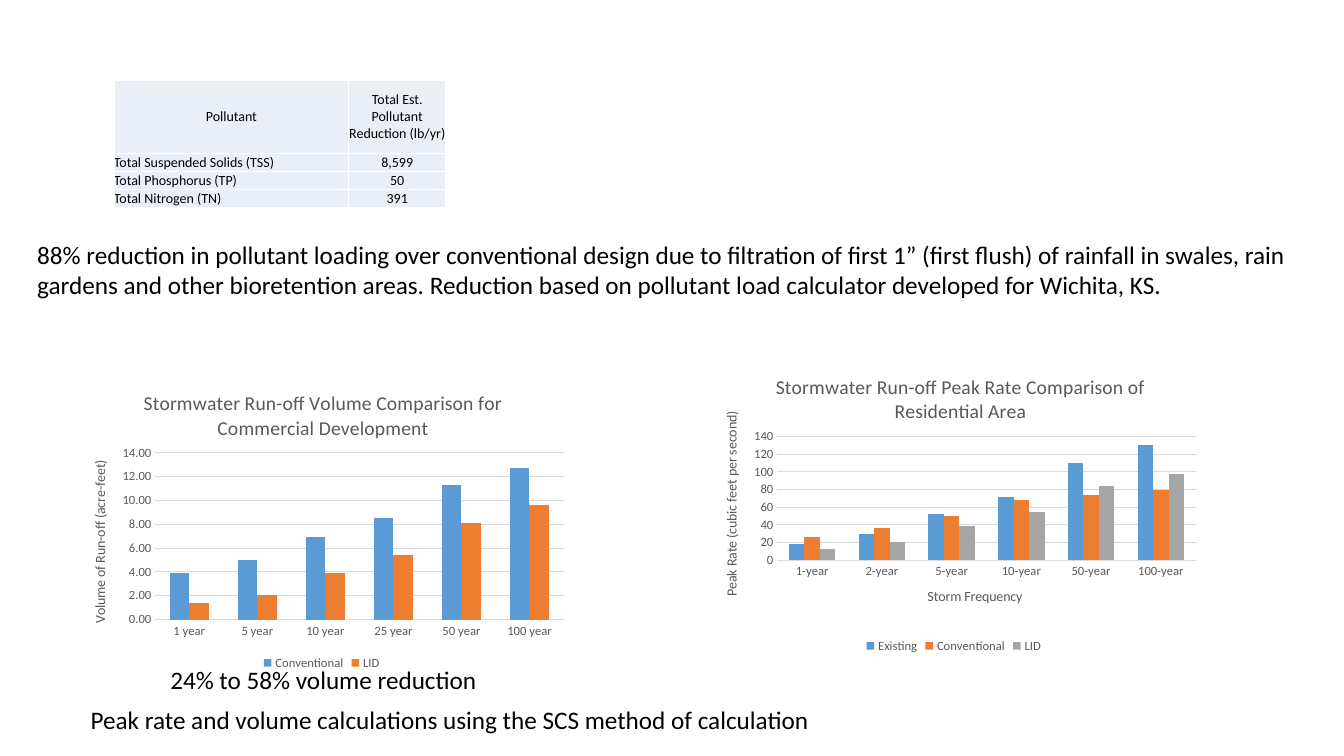
import pptx
import pptx.chart.data
import pptx.dml.color
import pptx.enum.chart
import pptx.enum.text
import pptx.oxml
import pptx.oxml.ns
import pptx.util
from dataclasses import dataclass

Inches = pptx.util.Inches
Pt = pptx.util.Pt


@dataclass(frozen=True)
class Theme:
    font: str = "Calibri"
    ink: str = "000000"
    muted: str = "595959"
    grid: str = "D9D9D9"
    cell: str = "EAEFF7"
    border: str = "FFFFFF"
    series: tuple = ("5B9BD5", "ED7D31", "A5A5A5")
    body: int = 18
    title: int = 14
    small: int = 10
    label: int = 9


THEME = Theme()


def rgb(value):
    return pptx.dml.color.RGBColor.from_string(value)


def set_font(font, size, color):
    font.name = THEME.font
    font.size = Pt(size)
    font.bold = False
    font.color.rgb = rgb(color)


def write_text(frame, text, size=THEME.body, color=THEME.ink, align=None):
    para = frame.paragraphs[0]
    para.alignment = align
    span = para.add_run()
    span.text = text
    set_font(span.font, size, color)


def add_note(page, box, text, wrap=False):
    shape = page.shapes.add_textbox(*map(Inches, box))
    shape.text_frame.word_wrap = wrap
    write_text(shape.text_frame, text)


def set_borders(cell):
    properties = cell._tc.get_or_add_tcPr()
    for position, side in enumerate(("lnL", "lnR", "lnT", "lnB")):
        line = pptx.oxml.parse_xml(
            f'<a:{side} {pptx.oxml.ns.nsdecls("a")} w="12700"><a:solidFill>'
            f'<a:srgbClr val="{THEME.border}"/></a:solidFill></a:{side}>')
        properties.insert(position, line)


def add_pollutant_table(page, box, rows, widths, heights):
    table = page.shapes.add_table(len(rows), len(widths), *map(Inches, box)).table
    for column, width in zip(table.columns, widths):
        column.width = Inches(width)
    for row, height in zip(table.rows, heights):
        row.height = Inches(height)
    for row_index, row in enumerate(rows):
        for column_index, text in enumerate(row):
            cell = table.cell(row_index, column_index)
            cell.margin_left = cell.margin_right = 0
            cell.margin_top = cell.margin_bottom = 0
            cell.vertical_anchor = pptx.enum.text.MSO_ANCHOR.MIDDLE
            cell.fill.solid()
            cell.fill.fore_color.rgb = rgb(THEME.cell)
            set_borders(cell)
            centered = row_index == 0 or column_index > 0
            align = pptx.enum.text.PP_ALIGN.CENTER if centered else None
            write_text(cell.text_frame, text, size=THEME.small, align=align)


def set_layout(parent, position, **fractions):
    for old in parent.findall(pptx.oxml.ns.qn("c:layout")):
        parent.remove(old)
    target = '<c:layoutTarget val="inner"/>' if "w" in fractions else ""
    modes = "".join(f'<c:{key}Mode val="edge"/>' for key in "xy")
    values = "".join(f'<c:{key} val="{value}"/>' for key, value in fractions.items())
    parent.insert(position, pptx.oxml.parse_xml(
        f'<c:layout {pptx.oxml.ns.nsdecls("c")}><c:manualLayout>'
        f'{target}{modes}{values}</c:manualLayout></c:layout>'))


def style_axis(axis, title):
    axis.major_tick_mark = pptx.enum.chart.XL_TICK_MARK.NONE
    axis.minor_tick_mark = pptx.enum.chart.XL_TICK_MARK.NONE
    axis.format.line.fill.background()
    set_font(axis.tick_labels.font, THEME.label, THEME.muted)
    axis.has_title = bool(title)
    if title:
        write_text(axis.axis_title.text_frame, title,
                   size=THEME.small, color=THEME.muted)


def add_runoff_chart(page, box, title, categories, series, plot_area,
                     value_title, category_title=None, number_format="0"):
    data = pptx.chart.data.CategoryChartData(number_format=number_format)
    data.categories = categories
    for name, values in series.items():
        data.add_series(name, values)
    chart = page.shapes.add_chart(
        pptx.enum.chart.XL_CHART_TYPE.COLUMN_CLUSTERED,
        *map(Inches, box), data).chart
    set_font(chart.font, THEME.small, THEME.ink)

    chart.has_title = True
    write_text(chart.chart_title.text_frame, title,
               size=THEME.title, color=THEME.muted)
    chart.chart_title.include_in_layout = False
    set_layout(chart.chart_title._element, 1, x=0.14, y=0.05)

    style_axis(chart.category_axis, category_title)
    style_axis(chart.value_axis, value_title)
    chart.value_axis.tick_labels.number_format = number_format
    chart.value_axis.tick_labels.number_format_is_linked = False
    grid = chart.value_axis.major_gridlines.format.line
    grid.color.rgb = rgb(THEME.grid)
    grid.width = Pt(0.75)

    chart.has_legend = True
    chart.legend.position = pptx.enum.chart.XL_LEGEND_POSITION.BOTTOM
    chart.legend.include_in_layout = False
    set_font(chart.legend.font, THEME.label, THEME.muted)

    plot = chart.plots[0]
    plot.gap_width = 150
    plot.overlap = 0
    plot.vary_by_categories = False
    for bars, color in zip(plot.series, THEME.series):
        bars.format.fill.solid()
        bars.format.fill.fore_color.rgb = rgb(color)
    set_layout(plot._element.getparent(), 0, **plot_area)


def build_results_slide(deck):
    page = deck.slides.add_slide(deck.slide_layouts[6])
    add_pollutant_table(
        page, (1.13, 0.8, 3.29, 1.26),
        [("Pollutant", "Total Est. Pollutant Reduction (lb/yr)"),
         ("Total Suspended Solids (TSS)", "8,599"),
         ("Total Phosphorus (TP)", "50"),
         ("Total Nitrogen (TN)", "391")],
        widths=(2.33, 0.96), heights=(0.72, 0.18, 0.18, 0.18))
    add_note(
        page, (0.27, 2.32, 12.85, 0.71),
        "88% reduction in pollutant loading over conventional design due to "
        "filtration of first 1” (first flush) of rainfall in swales, rain gardens "
        "and other bioretention areas. Reduction based on pollutant load "
        "calculator developed for Wichita, KS.", wrap=True)
    add_note(page, (0.8, 6.94, 7.36, 0.4),
             "Peak rate and volume calculations using the SCS method of calculation")
    add_runoff_chart(
        page, (0.69, 3.68, 5, 3.01),
        "Stormwater Run-off Volume Comparison for Commercial Development",
        [f"{years} year" for years in (1, 5, 10, 25, 50, 100)],
        {"Conventional": (3.9, 5, 6.9, 8.5, 11.3, 12.7),
         "LID": (1.4, 2.1, 3.9, 5.4, 8.1, 9.6)},
        plot_area=dict(x=0.17, y=0.27, w=0.81, h=0.55),
        value_title="Volume of Run-off (acre-feet)", number_format="0.00")
    add_runoff_chart(
        page, (6.96, 3.52, 5, 3),
        "Stormwater Run-off Peak Rate Comparison of Residential Area",
        [f"{years}-year" for years in (1, 2, 5, 10, 50, 100)],
        {"Existing": (19, 30, 52, 72, 110, 130),
         "Conventional": (26, 37, 50, 68, 74, 80),
         "LID": (13, 21, 39, 55, 84, 98)},
        plot_area=dict(x=0.15, y=0.27, w=0.83, h=0.41),
        value_title="Peak Rate (cubic feet per second)",
        category_title="Storm Frequency")
    add_note(page, (1.59, 6.54, 3.28, 0.4), "24% to 58% volume reduction")


def main():
    deck = pptx.Presentation()
    deck.slide_width = Inches(13.33)
    deck.slide_height = Inches(7.5)
    build_results_slide(deck)
    deck.save("out.pptx")


if __name__ == "__main__":
    main()
